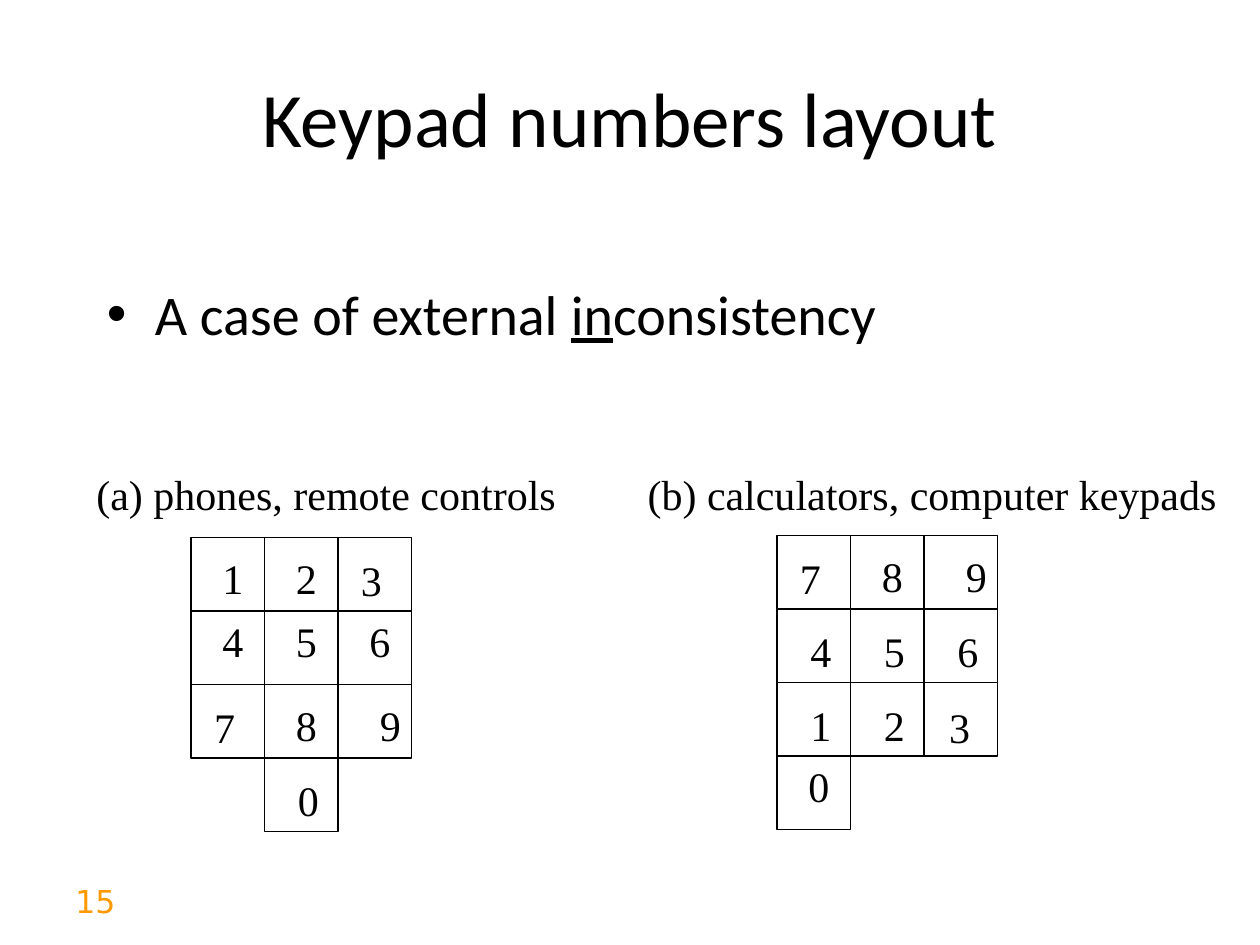
from lxml.etree import SubElement
from pptx import Presentation
from pptx.dml.color import RGBColor
from pptx.enum.shapes import MSO_SHAPE as Shape
from pptx.enum.text import MSO_ANCHOR as Anchor, MSO_AUTO_SIZE as AutoSize, PP_ALIGN as Align
from pptx.oxml.ns import qn
from pptx.util import Inches, Pt

BLACK = RGBColor(0x00, 0x00, 0x00)
ORANGE = RGBColor(0xFF, 0x99, 0x00)
COLUMNS, ROWS, KEY = 600, 450, 35

PHONE = {
    "rows": ["123", "456", "789", " 0"],
    "nudge": (9, 4),
    "nudges": {"3": (5, 5), "4": (9, -1), "5": (9, -1), "6": (9, -1),
               "7": (5, 5), "9": (14, 4), "0": (10, 5)},
}
CALCULATOR = {
    "rows": ["789", "456", "123", "0"],
    "nudge": (10, 5),
    "nudges": {"7": (5, 5), "8": (9, 4), "9": (14, 4), "3": (6, 6), "0": (9, -1)},
}


def apply(target, **values):
    """Set each named attribute on the target."""
    for name, value in values.items():
        setattr(target, name, value)


class SlideBuilder:
    """Draws styled elements on one slide, placed by grid column and row."""

    TITLE = {"name": "Calibri", "size": Pt(44)}
    BODY = {"name": "Calibri", "size": Pt(32)}
    LABEL = {"name": "Times New Roman", "size": Pt(24)}
    NUMBER = {"name": "DejaVu Sans", "size": Pt(18)}

    def __init__(self, presentation):
        self.presentation = presentation
        self.slide = presentation.slides.add_slide(presentation.slide_layouts[6])

    def box(self, column, row, width, height):
        across = self.presentation.slide_width / COLUMNS
        down = self.presentation.slide_height / ROWS
        return [round(value) for value in
                (column * across, row * down, width * across, height * down)]

    def text(self, place, runs, font, color=BLACK, align=Align.LEFT, **frame_format):
        frame = self.slide.shapes.add_textbox(*self.box(*place)).text_frame
        apply(frame, **{"word_wrap": True, **frame_format})
        paragraph = frame.paragraphs[0]
        paragraph.alignment = align
        for words, underline in runs:
            run = paragraph.add_run()
            run.text = words
            apply(run.font, underline=underline, **font)
            run.font.color.rgb = color
        return paragraph

    def bullet(self, place, runs):
        properties = self.text(place, runs, self.BODY)._p.get_or_add_pPr()
        properties.set("marL", str(Inches(0.38)))
        properties.set("indent", str(-Inches(0.38)))
        spacing = SubElement(properties, qn("a:spcBef"))
        SubElement(spacing, qn("a:spcPct"), val="20000")
        SubElement(properties, qn("a:buFont"), typeface="Arial")
        SubElement(properties, qn("a:buChar"), char="•")

    def label(self, place, words):
        self.text(place, [(words, None)], self.LABEL,
                  word_wrap=False, auto_size=AutoSize.SHAPE_TO_FIT_TEXT)

    def key(self, column, row):
        shape = self.slide.shapes.add_shape(Shape.RECTANGLE, *self.box(column, row, KEY, KEY))
        shape.shadow.inherit = False
        shape.fill.background()
        shape.line.color.rgb = BLACK
        shape.line.width = Pt(0.75)

    def keypad(self, left, top, rows, nudge, nudges):
        for down, digits in enumerate(rows):
            for across, digit in enumerate(digits):
                if digit == " ":
                    continue
                column, row = left + across * KEY, top + down * KEY
                right, below = nudges.get(digit, nudge)
                self.key(column, row)
                self.label((column + right, row + below, 22, 30), digit)


def main():
    presentation = Presentation()
    apply(presentation, slide_width=Inches(10), slide_height=Inches(7.5))
    builder = SlideBuilder(presentation)
    builder.text((30, 417, 140, 24), [("15", None)], builder.NUMBER, ORANGE)
    builder.text((30, 18, 540, 75), [("Keypad numbers layout", None)], builder.TITLE,
                 align=Align.CENTER, vertical_anchor=Anchor.MIDDLE)
    builder.bullet((45, 130, 525, 270), [("A case of external ", None), ("in", True),
                                         ("consistency", None)])
    builder.keypad(91, 256, **PHONE)
    builder.keypad(370, 255, **CALCULATOR)
    builder.label((40, 220, 231, 30), "(a) phones, remote controls")
    builder.label((302.5, 220, 283, 30), "(b) calculators, computer keypads")
    presentation.save("out.pptx")


if __name__ == "__main__":
    main()
